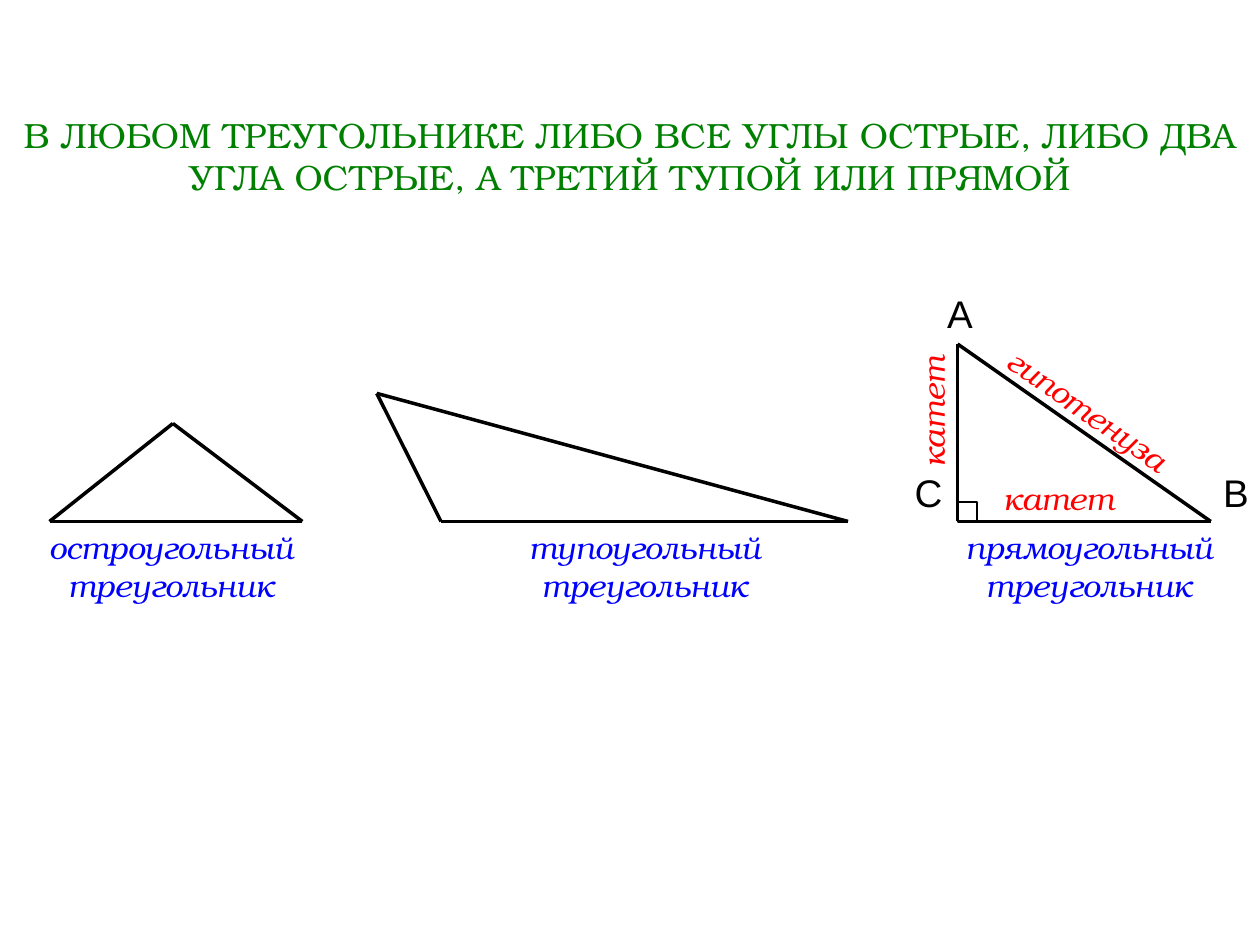
from itertools import pairwise

from lxml.etree import SubElement
from pptx import Presentation
from pptx.dml.color import RGBColor
from pptx.enum.shapes import MSO_CONNECTOR, MSO_SHAPE
from pptx.enum.text import MSO_ANCHOR, MSO_AUTO_SIZE, PP_ALIGN
from pptx.oxml.ns import qn
from pptx.util import Pt

BLACK = RGBColor(0, 0, 0)
GREEN = RGBColor(0, 128, 0)
BLUE = RGBColor(0, 0, 255)
RED = RGBColor(255, 0, 0)
SERIF = "TeX Gyre Bonum"
SANS = "Arial"
BASELINE = 298
RIGHT_ANGLE_X = 547.2
MARK_SIZE = 11.3


class TriangleSlide:
    """Hold the text style and the slide, and draw each kind of element."""

    def __init__(self, slide):
        self.slide = slide

    def set_text(self, shape, text, size, color, font=SERIF, italic=False, align=PP_ALIGN.CENTER):
        frame = shape.text_frame
        frame.word_wrap = True
        frame.auto_size = MSO_AUTO_SIZE.NONE
        frame.vertical_anchor = MSO_ANCHOR.TOP
        frame.text = text
        paragraph = frame.paragraphs[0]
        paragraph.alignment = align
        paragraph.font.name = font
        paragraph.font.size = Pt(size)
        paragraph.font.italic = italic
        paragraph.font.color.rgb = color

    def title(self, text, left, top, width, height):
        shape = self.slide.shapes.title
        shape.left, shape.top, shape.width, shape.height = map(Pt, (left, top, width, height))
        self.set_text(shape, text, 20, GREEN)

    def label(self, text, left, top, width, height, color, rotation=0):
        shape = self.slide.shapes.add_textbox(*map(Pt, (left, top, width, height)))
        shape.rotation = rotation
        self.set_text(shape, text, 18, color, italic=True)

    def vertex(self, text, left, top):
        shape = self.slide.shapes.add_textbox(Pt(left), Pt(top), Pt(26), Pt(34))
        self.set_text(shape, text, 22, BLACK, font=SANS, align=PP_ALIGN.LEFT)

    def triangle(self, corners):
        for start, end in pairwise(corners + corners[:1]):
            line = self.slide.shapes.add_connector(MSO_CONNECTOR.STRAIGHT, *map(Pt, start + end))
            line.line.color.rgb = BLACK
            line.line.width = Pt(2)
            SubElement(line._element.spPr, qn("a:effectLst"))

    def right_angle(self, left, bottom, size):
        shape = self.slide.shapes.add_shape(
            MSO_SHAPE.RECTANGLE, Pt(left), Pt(bottom - size), Pt(size), Pt(size))
        shape.shadow.inherit = False
        shape.fill.background()
        shape.line.color.rgb = BLACK
        shape.line.width = Pt(1.25)


def main():
    presentation = Presentation()
    presentation.slide_width, presentation.slide_height = Pt(720), Pt(540)
    page = TriangleSlide(presentation.slides.add_slide(presentation.slide_layouts[5]))
    page.title("В ЛЮБОМ ТРЕУГОЛЬНИКЕ ЛИБО ВСЕ УГЛЫ ОСТРЫЕ, ЛИБО ДВА УГЛА ОСТРЫЕ, "
               "А ТРЕТИЙ ТУПОЙ ИЛИ ПРЯМОЙ", 0, 61.2, 720, 55.4)

    triangles = [
        ("остроугольный треугольник", 19.4, 156.5,
         [(28.3, BASELINE), (98.8, 242), (172.8, BASELINE)]),
        ("тупоугольный треугольник", 252, 232.6,
         [(215.3, 224.8), (252, BASELINE), (484.6, BASELINE)]),
        ("прямоугольный треугольник", 538.6, 167,
         [(RIGHT_ANGLE_X, BASELINE), (RIGHT_ANGLE_X, 196.6), (691.9, BASELINE)]),
    ]
    for caption, left, width, corners in triangles:
        page.triangle(corners)
        page.label(caption, left, BASELINE, width, 51, BLUE)

    page.right_angle(RIGHT_ANGLE_X, BASELINE + 0.3, MARK_SIZE)
    for letter, left, top in [("С", 515.5, 264.2), ("А", 534.2, 162), ("В", 691.9, 264.2)]:
        page.vertex(letter, left, top)
    page.label("гипотенуза", 556.6, 219.6, 130.3, 29, RED, rotation=34.8)
    page.label("катет", 560.2, 270, 89.3, 29, RED)
    page.label("катет", 488.2, 221, 89.3, 29, RED, rotation=270)

    presentation.save("out.pptx")


if __name__ == "__main__":
    main()
